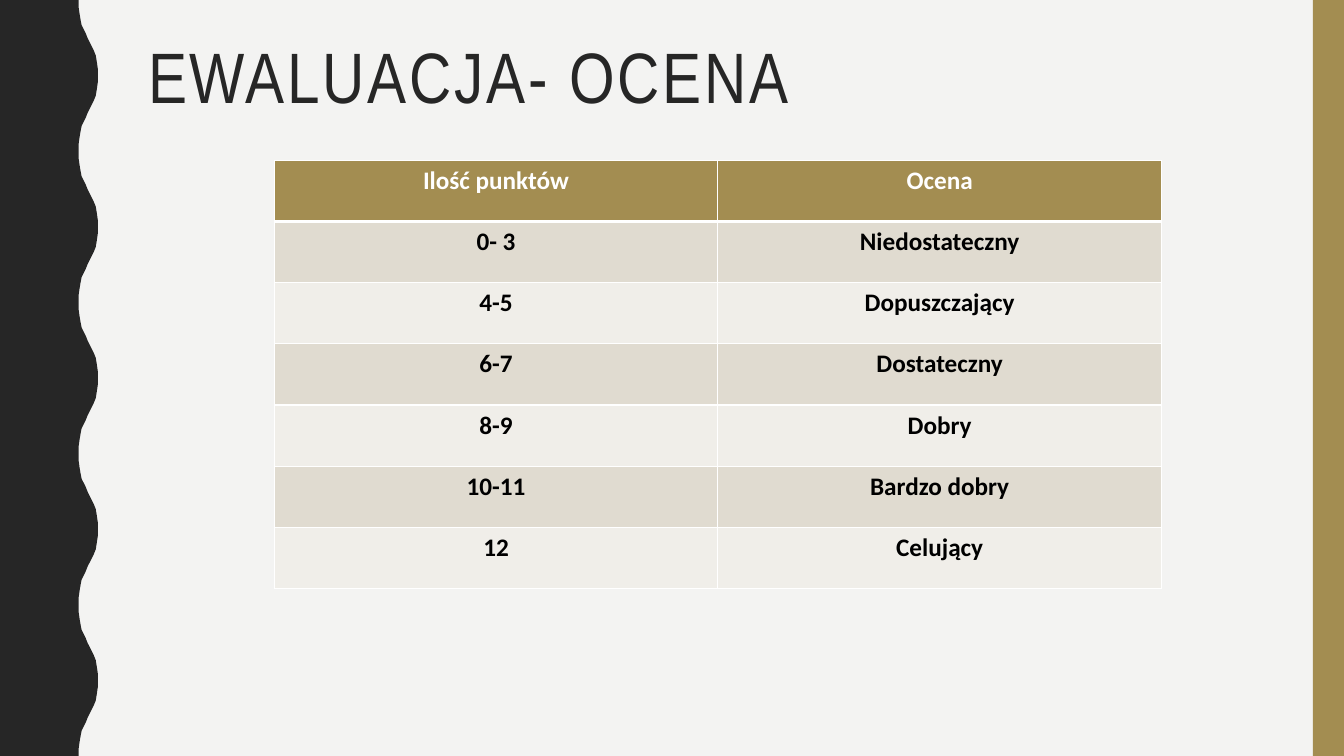
from dataclasses import dataclass

from lxml.etree import SubElement
from pptx import Presentation
from pptx.dml.color import RGBColor
from pptx.enum.shapes import MSO_SHAPE as Shape
from pptx.enum.text import MSO_ANCHOR as Anchor, PP_ALIGN as Align
from pptx.oxml.ns import qn
from pptx.util import Inches, Pt


@dataclass(frozen=True)
class Theme:
    paper: str = "F3F3F2"
    dark: str = "262626"
    gold: str = "A38D51"
    white: str = "FFFFFF"
    black: str = "000000"
    bands: tuple = ("E0DBD0", "F0EEE9")
    title_font: str = "Arial Narrow"
    table_font: str = "Calibri"
    title_size: int = 51
    table_size: int = 18


SLIDE_WIDTH, SLIDE_HEIGHT = 13.33, 7.5

# Half of one wave, from trough to crest; the other half mirrors it
WAVE_LENGTH, WAVE_COUNT = 1.5, 5
HALF_WAVE = [
    (0.78, 0), (0.78, 0.07), (0.79, 0.14), (0.8, 0.2), (0.81, 0.25),
    (0.83, 0.29), (0.85, 0.33), (0.87, 0.38), (0.89, 0.42), (0.91, 0.46),
    (0.93, 0.5), (0.95, 0.55), (0.96, 0.61), (0.97, 0.68), (0.97, 0.75),
]

GRADES = [
    ("Ilość punktów", "Ocena"),
    ("0- 3", "Niedostateczny"),
    ("4-5", "Dopuszczający"),
    ("6-7", "Dostateczny"),
    ("8-9", "Dobry"),
    ("10-11", "Bardzo dobry"),
    ("12", "Celujący"),
]


def wave_outline():
    wave = HALF_WAVE + [(x, WAVE_LENGTH - y) for x, y in HALF_WAVE[-2:0:-1]]
    edge = [(x, y + number * WAVE_LENGTH)
            for number in range(WAVE_COUNT) for x, y in wave]
    return [(0, 0), *edge, (HALF_WAVE[0][0], SLIDE_HEIGHT), (0, SLIDE_HEIGHT)]


class SlideBuilder:
    def __init__(self, page, theme):
        self.page = page
        self.theme = theme

    def background(self, color):
        fill = self.page.background.fill
        fill.solid()
        fill.fore_color.rgb = RGBColor.from_string(color)

    def paint(self, shape, color):
        shape.shadow.inherit = False
        shape.fill.solid()
        shape.fill.fore_color.rgb = RGBColor.from_string(color)
        shape.line.fill.background()

    def outline(self, points, color):
        corners = [(Inches(x), Inches(y)) for x, y in points]
        builder = self.page.shapes.build_freeform(*corners[0])
        builder.add_line_segments(corners[1:], close=True)
        self.paint(builder.convert_to_shape(), color)

    def bar(self, place, color):
        bar = self.page.shapes.add_shape(Shape.RECTANGLE, *map(Inches, place))
        self.paint(bar, color)

    def add_span(self, para, text, color, **font_format):
        span = para.add_run()
        span.text = text
        span.font.color.rgb = RGBColor.from_string(color)
        for name, value in font_format.items():
            setattr(span.font, name, value)
        return span

    def title(self, place, text):
        box = self.page.shapes.add_textbox(*map(Inches, place))
        frame = box.text_frame
        for name, value in {"word_wrap": True, "vertical_anchor": Anchor.TOP}.items():
            setattr(frame, name, value)
        para = frame.paragraphs[0]
        para.line_spacing = 0.9
        span = self.add_span(para, text, self.theme.dark,
                             name=self.theme.title_font, size=Pt(self.theme.title_size))
        # Letter spacing of two points
        span._r.get_or_add_rPr().set("spc", "200")

    def borders(self, cell, widths):
        properties = cell._tc.get_or_add_tcPr()
        for side, width in widths.items():
            line = SubElement(properties, qn(f"a:ln{side}"), w=str(Pt(width)))
            fill = SubElement(line, qn("a:solidFill"))
            SubElement(fill, qn("a:srgbClr"), val=self.theme.white)

    def table(self, place, rows):
        theme = self.theme
        table = self.page.shapes.add_table(
            len(rows), len(rows[0]), *map(Inches, place)).table
        for row_number, texts in enumerate(rows):
            header = row_number == 0
            color = theme.gold if header else theme.bands[(row_number - 1) % 2]
            # The rule under the header is thicker than the others
            widths = {"L": 1, "R": 1, "T": 3 if row_number == 1 else 1,
                      "B": 3 if header else 1}
            for column_number, text in enumerate(texts):
                cell = table.cell(row_number, column_number)
                self.borders(cell, widths)
                cell.fill.solid()
                cell.fill.fore_color.rgb = RGBColor.from_string(color)
                para = cell.text_frame.paragraphs[0]
                para.alignment = Align.CENTER
                self.add_span(para, text, theme.white if header else theme.black,
                              name=theme.table_font, size=Pt(theme.table_size),
                              bold=True)


def main():
    deck = Presentation()
    deck.slide_width, deck.slide_height = Inches(SLIDE_WIDTH), Inches(SLIDE_HEIGHT)
    theme = Theme()
    slide = SlideBuilder(deck.slides.add_slide(deck.slide_layouts[6]), theme)

    # Backdrop: wavy left edge and gold right edge
    slide.background(theme.paper)
    slide.outline(wave_outline(), theme.dark)
    slide.bar((13.02, 0, 0.31, SLIDE_HEIGHT), theme.gold)

    # Title and grading scale
    slide.title((1.37, 0.37, 11.13, 1.02), "EWALUACJA- OCENA")
    slide.table((2.72, 1.59, 8.8, 4.25), GRADES)

    deck.save("out.pptx")


if __name__ == "__main__":
    main()
